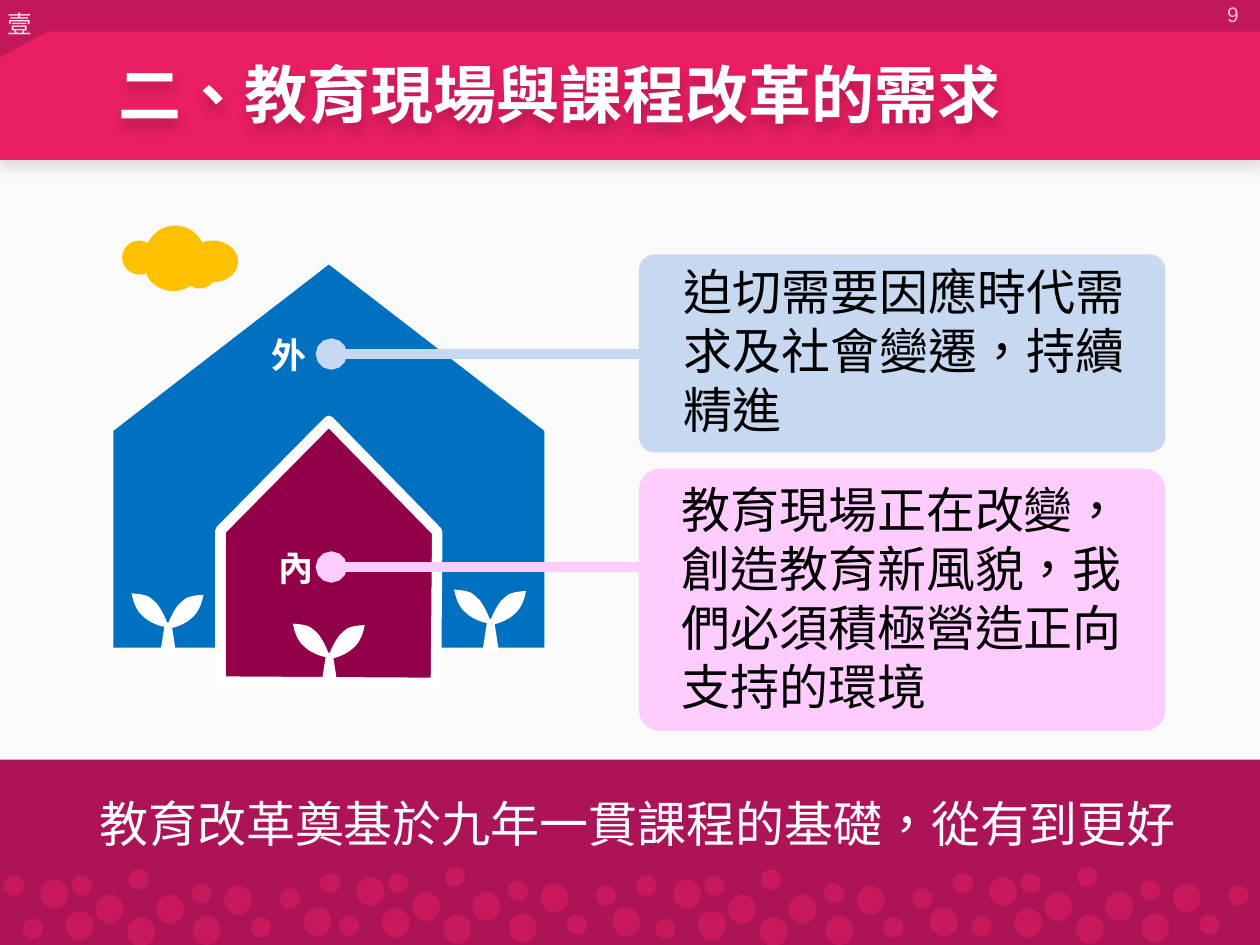
"""Build the slide on why schools and the curriculum need reform."""
import dataclasses
import math

import lxml.etree
import pptx
import pptx.dml.color
import pptx.enum.lang
import pptx.enum.shapes
import pptx.enum.text
import pptx.oxml.ns
import pptx.util

Inches = pptx.util.Inches
Shape = pptx.enum.shapes.MSO_SHAPE
Align = pptx.enum.text.PP_ALIGN
Anchor = pptx.enum.text.MSO_ANCHOR
qualified = pptx.oxml.ns.qn


@dataclasses.dataclass(frozen=True)
class Theme:
    paper: str = "FAFAFA"
    band: str = "E91E63"
    strip: str = "C2185B"
    chapter: str = "FCE4EC"
    number: str = "F8BBD0"
    footer: str = "AD1457"
    dot: str = "C8195D"
    outer: str = "0070C0"
    inner: str = "920049"
    cloud: str = "FFC000"
    outer_note: str = "C6D9F1"
    inner_note: str = "FFCCFF"
    white: str = "FFFFFF"
    black: str = "000000"
    font: str = "Noto Sans CJK SC"
    number_font: str = "Arial"
    title_size: int = 36
    body_size: int = 28
    label_size: int = 20
    chapter_size: int = 14
    number_size: int = 12
    line_factor: float = 1.2
    stroke: int = 6


def color(value):
    return pptx.dml.color.RGBColor.from_string(value)


def add_element(parent, tag, **attributes):
    return lxml.etree.SubElement(parent, qualified(tag), attributes)


def turn(points, center, degrees):
    """Return the points turned clockwise about the center."""
    cosine, sine = math.cos(math.radians(degrees)), math.sin(math.radians(degrees))
    offsets = [(x - center[0], y - center[1]) for x, y in points]
    return [(center[0] + x * cosine - y * sine, center[1] + x * sine + y * cosine)
            for x, y in offsets]


class SlideBuilder:
    """Draw styled elements on the current slide."""

    def __init__(self, slide, theme):
        self.slide = slide
        self.theme = theme

    def finish(self, shape, fill, line=None):
        shape.shadow.inherit = False
        shape.fill.solid()
        shape.fill.fore_color.rgb = color(fill)
        if line:
            shape.line.color.rgb = color(line)
            shape.line.width = pptx.util.Pt(self.theme.stroke)
        else:
            shape.line.fill.background()
        return shape

    def shape(self, kind, left, top, width, height, fill, corner=None):
        shape = self.slide.shapes.add_shape(
            kind, Inches(left), Inches(top), Inches(width), Inches(height))
        if corner is not None:
            shape.adjustments[0] = corner
        return self.finish(shape, fill)

    def outline(self, points, fill, line=None):
        corners = [(Inches(x), Inches(y)) for x, y in points]
        builder = self.slide.shapes.build_freeform(*corners[0])
        builder.add_line_segments(corners[1:])
        return self.finish(builder.convert_to_shape(), fill, line)

    def curved_outline(self, points, fill, degrees):
        shape = self.outline(points, fill)
        segments = list(shape.element.iter(qualified("a:lnTo")))[:len(points) - 1]
        for first in range(0, len(segments), 3):
            group = segments[first:first + 3]
            cubic = lxml.etree.Element(qualified("a:cubicBezTo"))
            group[0].addprevious(cubic)
            for segment in group:
                cubic.append(segment[0])
                segment.getparent().remove(segment)
        shape.rotation = degrees

    def shadow(self, shape, opacity):
        shape.shadow.inherit = False
        effects = shape.element.spPr.find(qualified("a:effectLst"))
        outer = add_element(
            effects, "a:outerShdw", blurRad=str(pptx.util.Pt(6)),
            dist=str(pptx.util.Pt(4)), dir="5400000", algn="t", rotWithShape="0")
        tint = add_element(outer, "a:srgbClr", val=self.theme.black)
        add_element(tint, "a:alpha", val=str(opacity * 1000))

    def text(self, wording, left, top, width, height, size, fill, bold=False,
             wrap=True, anchor=Anchor.TOP, align=Align.LEFT, font=None):
        box = self.slide.shapes.add_textbox(
            Inches(left), Inches(top), Inches(width), Inches(height))
        frame = box.text_frame
        frame.word_wrap = wrap
        frame.vertical_anchor = anchor
        paragraph = frame.paragraphs[0]
        paragraph.text = wording
        paragraph.alignment = align
        paragraph.line_spacing = pptx.util.Pt(size * self.theme.line_factor)
        style = paragraph.font
        style.size = pptx.util.Pt(size)
        style.bold = bold
        style.color.rgb = color(fill)
        style.name = font or self.theme.font
        run_font = paragraph.runs[0].font
        run_font.language_id = pptx.enum.lang.MSO_LANGUAGE_ID.TRADITIONAL_CHINESE
        add_element(run_font._element, "a:ea", typeface=self.theme.font)
        return box

    def pointer(self, x1, x2, y, fill):
        connector = self.slide.shapes.add_connector(
            pptx.enum.shapes.MSO_CONNECTOR.STRAIGHT,
            Inches(x1), Inches(y), Inches(x2), Inches(y))
        connector.line.color.rgb = color(fill)
        connector.line.width = pptx.util.Pt(self.theme.stroke)
        add_element(connector.line._get_or_add_ln(), "a:headEnd", type="oval")
        add_element(connector.element.spPr, "a:effectLst")

    def leaf(self, x, y, side):
        points = [
            (0, 0.26), (0.02, 0.25), (-0.04, 0.13), (-0.08, 0.08),
            (-0.13, 0.04), (-0.12, 0.01), (-0.28, 0), (-0.26, 0.1),
            (-0.23, 0.15), (-0.18, 0.19), (-0.14, 0.23), (-0.02, 0.28), (0, 0.26)]
        placed = [(x + side * dx, y + dy) for dx, dy in points]
        degrees = 34.9 * side
        level = turn(placed, (x - side * 0.13, y + 0.13), -degrees)
        self.curved_outline(level, self.theme.white, degrees)

    def sprout(self, x, y):
        stem = [(-0.02, 0.23), (0.03, 0.23), (0.07, 0.49), (-0.06, 0.49), (-0.02, 0.23)]
        self.leaf(x, y, 1)
        self.outline([(x + dx, y + dy) for dx, dy in stem], self.theme.white)
        self.leaf(x, y + 0.01, -1)

    def dots(self, places, width, height, left=0, top=0):
        for x, y in places:
            self.shape(Shape.FLOWCHART_CONNECTOR, left + x, top + y,
                       width, height, self.theme.dot)

    def note(self, card_top, card_height, text_box, wording, line_y, label,
             label_left, fill):
        theme = self.theme
        self.shape(Shape.ROUNDED_RECTANGLE, 5.07, card_top, 4.18, card_height, fill, 0.08)
        self.text(wording, *text_box, theme.body_size, theme.black)
        self.pointer(2.63, 5.07, line_y, fill)
        self.text(label, label_left, line_y - 0.21, 0.48, 0.44, theme.label_size,
                  theme.white, bold=True, wrap=False)


def main():
    presentation = pptx.Presentation()
    presentation.slide_width = Inches(10)
    presentation.slide_height = Inches(7.5)
    theme = Theme()
    builder = SlideBuilder(
        presentation.slides.add_slide(presentation.slide_layouts[6]), theme)

    builder.shape(Shape.RECTANGLE, -0.01, 0.44, 10.03, 7.06, theme.paper)
    builder.shadow(builder.shape(
        Shape.ROUNDED_RECTANGLE, -0.01, 0, 10.01, 1.27, theme.band, 0), 10)
    builder.shape(Shape.ROUNDED_RECTANGLE, -0.01, -0.02, 10.01, 0.27, theme.strip, 0)
    builder.outline([(-0.01, 0.25), (-0.01, 0.46), (0.38, 0.25), (-0.01, 0.25)],
                    theme.strip)
    builder.text("壹", -0.04, 0.02, 0.4, 0.34, theme.chapter_size, theme.chapter, wrap=False)
    builder.shape(Shape.RECTANGLE, 0, 6.03, 10, 1.47, theme.footer)

    builder.shape(Shape.ISOSCELES_TRIANGLE, 0.9, 2.1, 3.42, 1.32, theme.outer)
    builder.shape(Shape.RECTANGLE, 0.9, 3.42, 3.42, 1.72, theme.outer)
    builder.outline([(1.75, 5.41), (1.75, 4.21), (2.61, 3.34), (3.47, 4.22),
                     (3.46, 5.42), (1.75, 5.41)], theme.inner, theme.white)
    builder.text("教育改革奠基於九年一貫課程的基礎，從有到更好",
                 0.69, 6.25, 9.07, 0.57, theme.body_size, theme.white)
    for x, y in ((2.61, 4.95), (3.89, 4.68), (1.33, 4.71)):
        builder.sprout(x, y)

    large = ((0.52, 7.21), (0.76, 7.08), (1.01, 7.26), (1.24, 7.08),
             (1.53, 7.25), (1.78, 7.01), (0.32, 6.96))
    small = ((1.52, 6.99), (0.18, 7.27), (0.57, 6.93), (0.03, 6.93),
             (1.02, 6.88), (1.99, 7.26), (2.22, 7.03))
    for tile in (3, 2, 1, 0):
        drop = 0.02 if tile % 2 == 0 else 0
        builder.dots(large, 0.22, 0.23, tile * 2.51, drop)
        builder.dots(small, 0.16, 0.16, tile * 2.51, drop)
    builder.dots(((2.41, 7.2), (4.86, 7.2), (7.38, 7.2)), 0.22, 0.23)

    for puff in ((0.97, 1.91, 0.27, 0.27), (1.15, 1.79, 0.48, 0.49),
                 (1.49, 1.91, 0.4, 0.33), (1.15, 1.91, 0.45, 0.4),
                 (1.45, 2.02, 0.27, 0.27)):
        builder.shape(Shape.OVAL, *puff, theme.cloud)

    builder.text("9", 7.6, -0.09, 2.33, 0.4, theme.number_size, theme.number,
                 anchor=Anchor.MIDDLE, align=Align.RIGHT, font=theme.number_font)
    builder.note(3.72, 2.08, (5.31, 3.76, 4.01, 1.99),
                 "教育現場正在改變，創造教育新風貌，我們必須積極營造正向支持的環境",
                 4.5, "內", 2.11, theme.inner_note)
    builder.note(2.02, 1.57, (5.33, 2.03, 4.07, 1.51),
                 "迫切需要因應時代需求及社會變遷，持續精進",
                 2.81, "外", 2.06, theme.outer_note)
    builder.shadow(builder.text(
        "二、教育現場與課程改革的需求", 0.84, 0.21, 9.16, 1.06, theme.title_size,
        theme.white, bold=True, anchor=Anchor.MIDDLE), 20)
    presentation.save("out.pptx")


if __name__ == "__main__":
    main()
